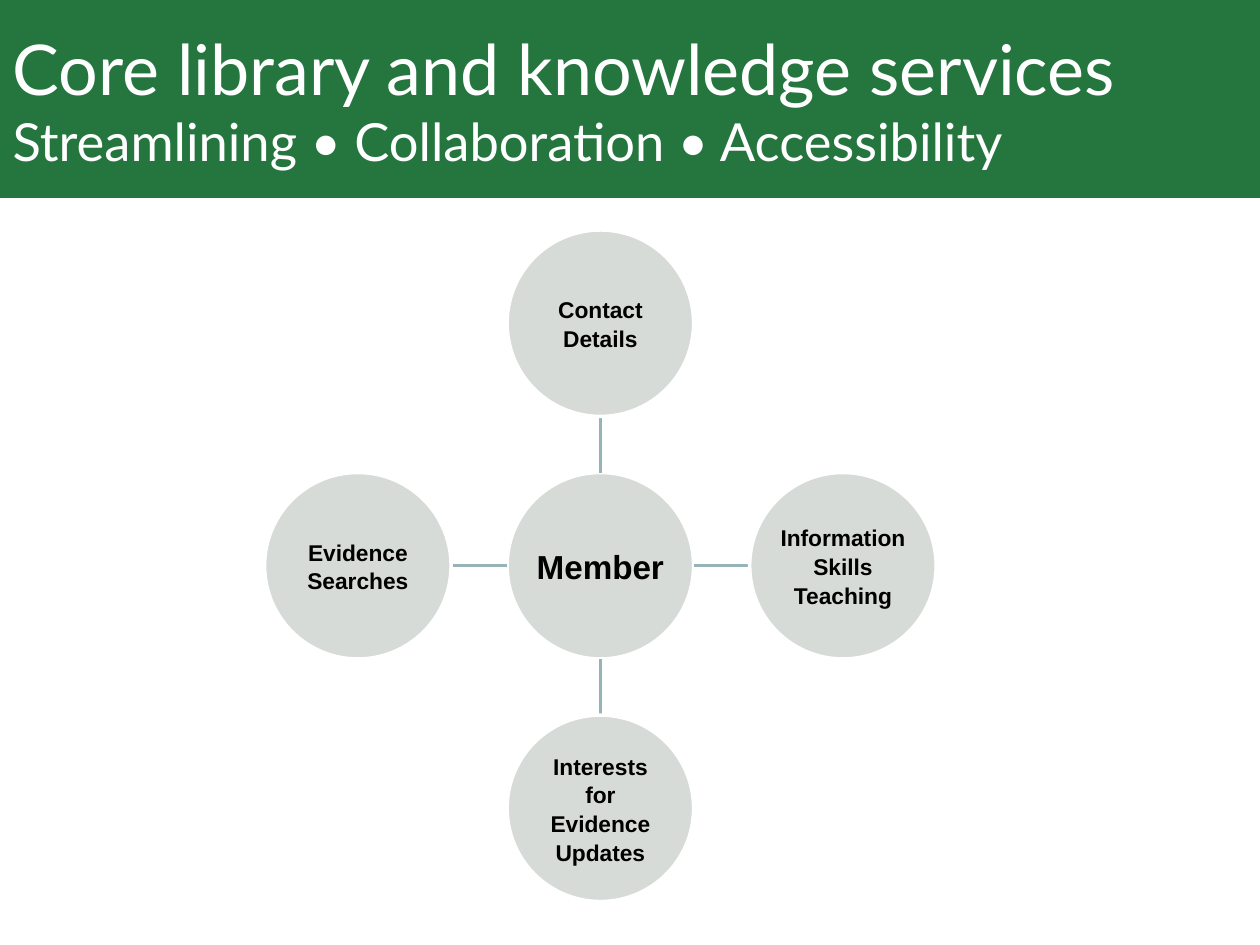
from pptx import Presentation
from pptx import util as u
from pptx.dml.color import RGBColor
from pptx.enum import shapes, text
from pptx.oxml.ns import qn
from lxml import etree

COLOURS = {"banner": "25763E", "circle": "D7DBD8", "spoke": "96B3B6",
           "light": "FFFFFF", "dark": "000000"}
DIAMETER = 1.48
STEP = 1.925
HUB_CENTRE = (4.765, 4.49)
SERVICES = [("Contact Details", 0, -1), ("Information Skills Teaching", 1, 0),
            ("Interests for Evidence Updates", 0, 1), ("Evidence Searches", -1, 0)]


def colour(name):
    return RGBColor.from_string(COLOURS[name])


def apply(target, **values):
    for name, value in values.items():
        setattr(target, name, value)


class HubSlide:
    """Draw a titled hub-and-spoke slide in one style."""

    def __init__(self, presentation):
        self.slide = presentation.slides.add_slide(presentation.slide_layouts[5])

    def fill(self, shape, name):
        shape.fill.solid()
        shape.fill.fore_color.rgb = colour(name)

    def run(self, paragraph, words, ink, **font):
        run = paragraph.add_run()
        run.text = words
        apply(run.font, **font)
        run.font.color.rgb = colour(ink)

    def title(self, heading, subheading):
        shape = self.slide.shapes.title
        apply(shape, left=0, top=0, width=u.Inches(10), height=u.Inches(1.57))
        self.fill(shape, "banner")
        apply(shape.text_frame, word_wrap=True, auto_size=text.MSO_AUTO_SIZE.NONE,
              vertical_anchor=text.MSO_ANCHOR.MIDDLE)
        paragraph = shape.text_frame.paragraphs[0]
        paragraph.alignment = text.PP_ALIGN.LEFT
        self.run(paragraph, heading, "light", name="Lato", size=u.Pt(40))
        paragraph.add_line_break()
        self.run(paragraph, subheading, "light", name="Lato", size=u.Pt(30))

    def circle(self, label, centre, size):
        left, top = (u.Inches(place - DIAMETER / 2) for place in centre)
        shape = self.slide.shapes.add_shape(
            shapes.MSO_SHAPE.OVAL, left, top, u.Inches(DIAMETER), u.Inches(DIAMETER))
        shape.shadow.inherit = False
        self.fill(shape, "circle")
        shape.line.color.rgb = colour("light")
        shape.line.width = u.Pt(2)
        margin = u.Inches(0.01)
        apply(shape.text_frame, word_wrap=True, vertical_anchor=text.MSO_ANCHOR.MIDDLE,
              margin_left=margin, margin_right=margin,
              margin_top=margin, margin_bottom=margin)
        paragraph = shape.text_frame.paragraphs[0]
        apply(paragraph, alignment=text.PP_ALIGN.CENTER, line_spacing=1.05)
        self.run(paragraph, label, "dark", name="Arial", size=u.Pt(size), bold=True)

    def spoke(self, start, end):
        line = self.slide.shapes.add_connector(
            shapes.MSO_CONNECTOR.STRAIGHT, *(u.Inches(place) for place in start + end))
        line.line.color.rgb = colour("spoke")
        line.line.width = u.Pt(2)
        etree.SubElement(line._element.spPr, qn("a:effectLst"))


def along(across, down, distance):
    return HUB_CENTRE[0] + across * distance, HUB_CENTRE[1] + down * distance


def main():
    presentation = Presentation()
    apply(presentation, slide_width=u.Inches(10), slide_height=u.Inches(7.5))
    hub = HubSlide(presentation)
    hub.title("Core library and knowledge services",
              "Streamlining • Collaboration • Accessibility")
    hub.circle("Member", HUB_CENTRE, 19)
    for label, across, down in SERVICES:
        hub.spoke(along(across, down, DIAMETER / 2),
                  along(across, down, STEP - DIAMETER / 2))
        hub.circle(label, along(across, down, STEP), 13)
    presentation.save("out.pptx")


if __name__ == "__main__":
    main()
